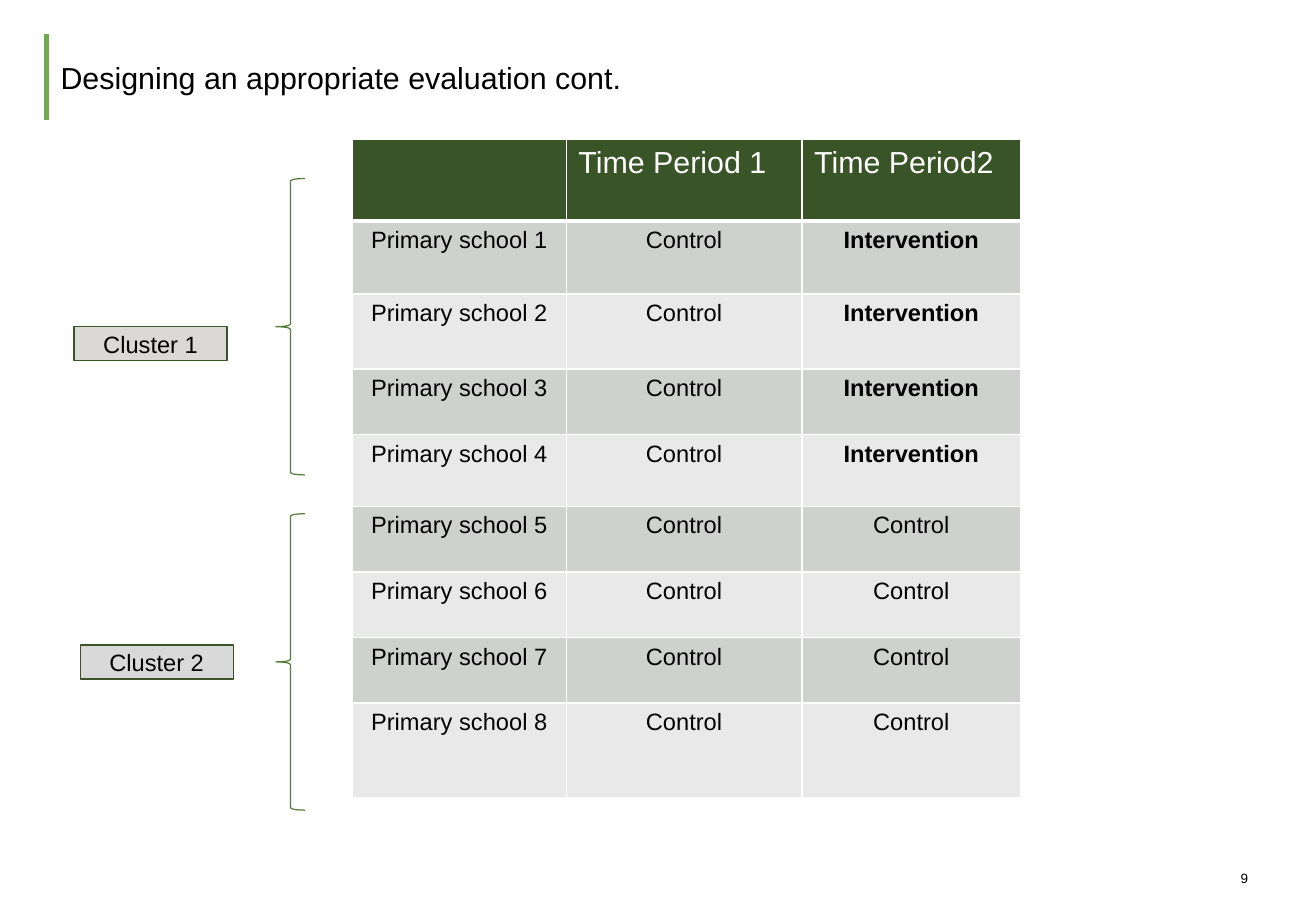
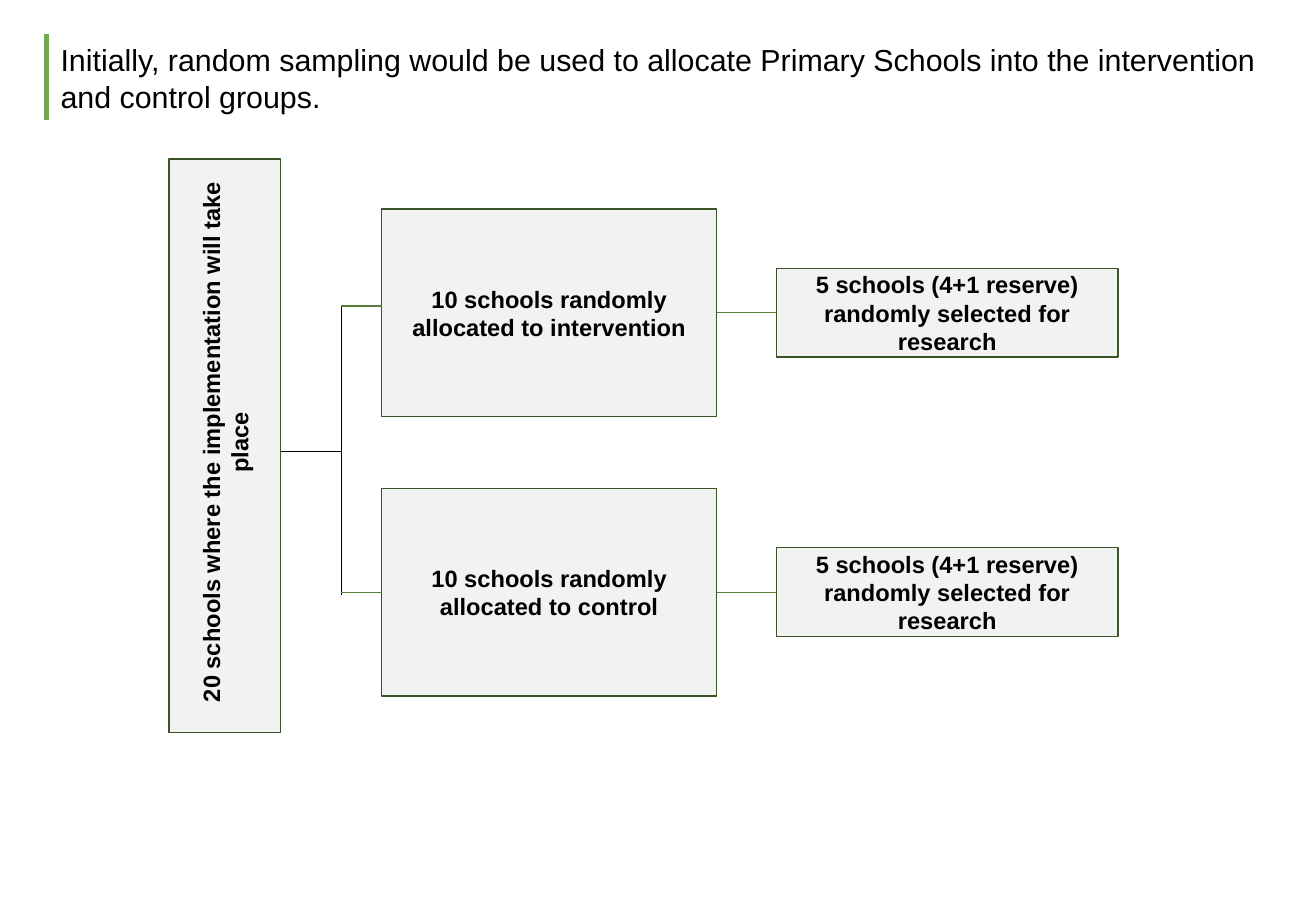
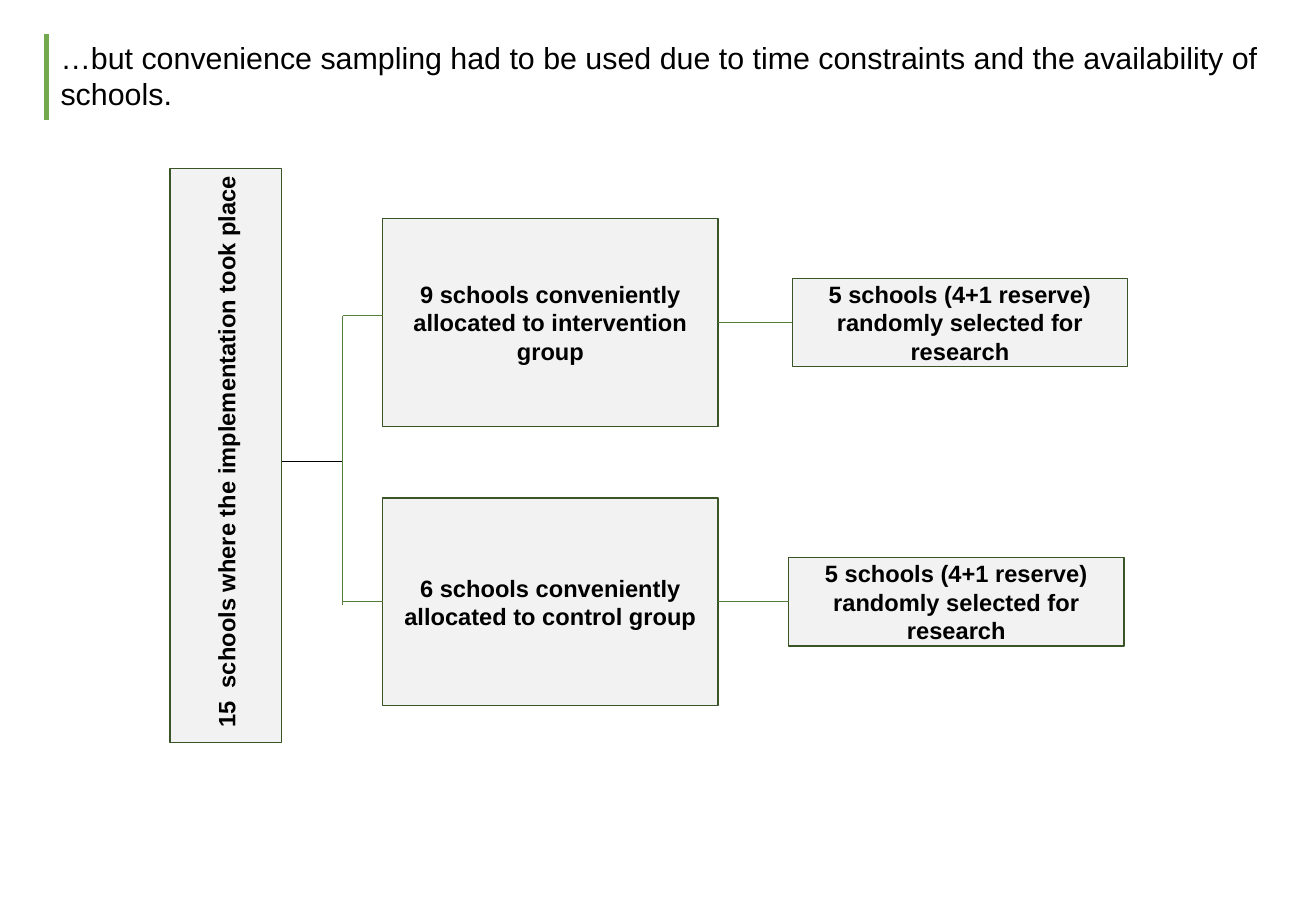
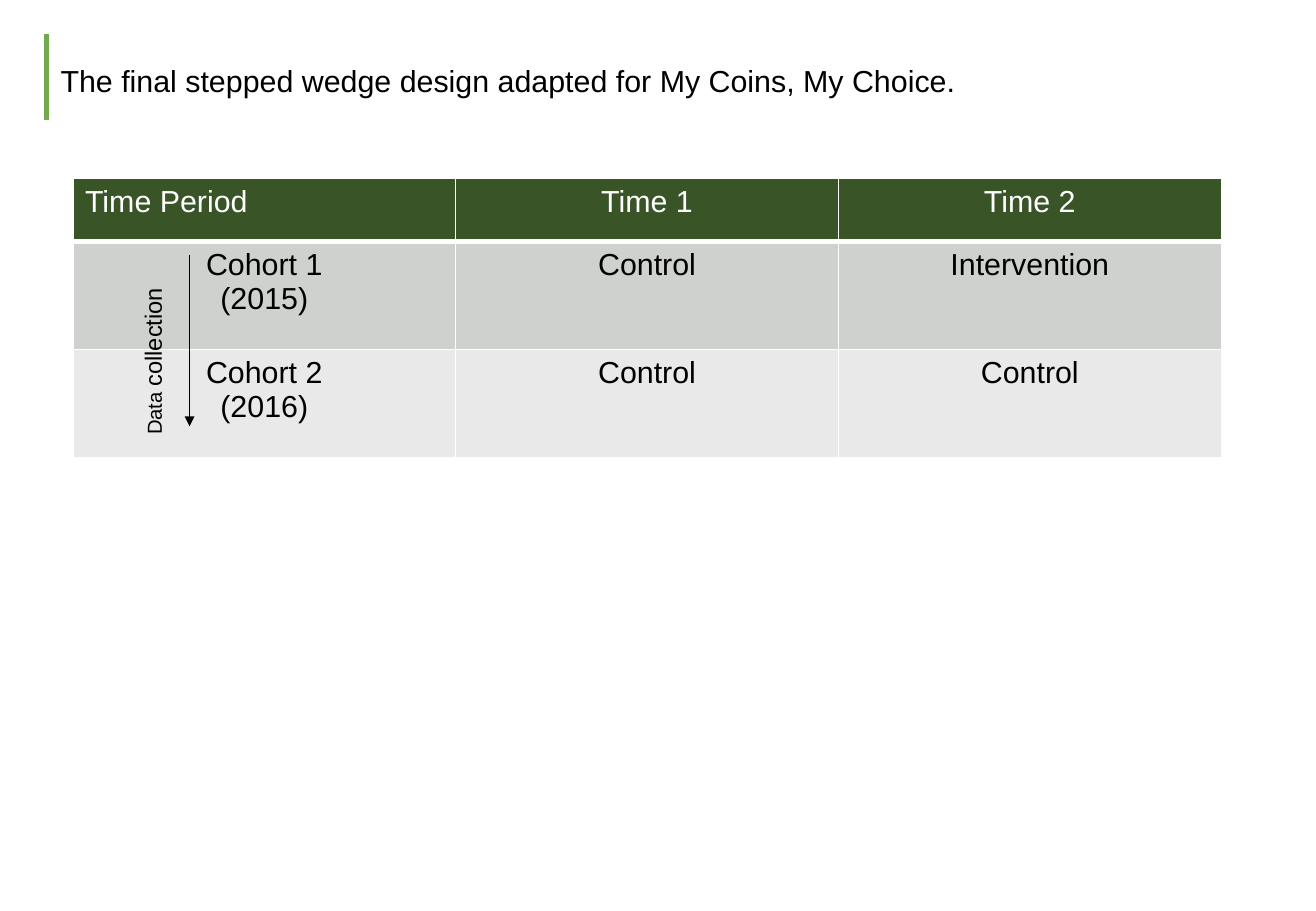
from pptx import Presentation
from pptx.dml.color import RGBColor
from pptx.enum.shapes import MSO_CONNECTOR, MSO_SHAPE
from pptx.enum.text import MSO_ANCHOR, PP_ALIGN
from pptx.oxml.ns import qn
from pptx.util import Inches, Pt
from lxml import etree

LINE = MSO_CONNECTOR.STRAIGHT
RECT, BRACE = MSO_SHAPE.RECTANGLE, MSO_SHAPE.LEFT_BRACE
MID, LOW = MSO_ANCHOR.MIDDLE, MSO_ANCHOR.BOTTOM
LEFT, CENTER = PP_ALIGN.LEFT, PP_ALIGN.CENTER

BLACK = RGBColor(0x00, 0x00, 0x00)
WHITE = RGBColor(0xFF, 0xFF, 0xFF)
ACCENT = RGBColor(0x72, 0xA8, 0x4E)
DARK = RGBColor(0x39, 0x54, 0x27)
GREEN = RGBColor(0x56, 0x7E, 0x3B)
PALE = RGBColor(0xF2, 0xF2, 0xF2)
WARM = RGBColor(0xDB, 0xD9, 0xD6)
GREY = RGBColor(0xD9, 0xD9, 0xD9)
BANDS = RGBColor(0xCE, 0xD1, 0xCD), RGBColor(0xE8, 0xE9, 0xE8)

# Text formats
BASE = {"name": "Arial", "size": Pt(14), "color": BLACK}
HEAD = {**BASE, "size": Pt(18)}
BOLD = {**BASE, "bold": True}
TINY = {**BASE, "size": Pt(8)}

# Content
PERIODS = [["", "Time Period 1", "Time Period2"]] + [
    [f"Primary school {n}", "Control", "Intervention" if n < 5 else "Control"]
    for n in range(1, 9)]
COHORTS = [
    ["Time Period", "Time 1", "Time 2"],
    ["Cohort 1\n(2015)", "Control", "Intervention"],
    ["Cohort 2\n(2016)", "Control", "Control"],
]
# Label, left, top, fill
CLUSTERS = [("Cluster 1", 0.61, 2.69, WARM), ("Cluster 2", 0.66, 5.31, GREY)]
PICKED = "5 schools (4+1 reserve) randomly selected for research"
FLOWS = [
    {"title": "Initially, random sampling would be used to allocate Primary "
              "Schools into the intervention and control groups.",
     "top": 0.29, "at": (1.39, 1.31), "trunk": BLACK,
     "stem": "20 schools where the implementation will take place",
     "arms": ["10 schools randomly allocated to intervention",
              "10 schools randomly allocated to control"],
     "ends": (6.39, 6.39), "wide": 2.81},
    {"title": "…but convenience sampling had to be used due to time "
              "constraints and the availability of schools.",
     "top": 0.27, "at": (1.4, 1.39), "trunk": GREEN,
     "stem": "15  schools where the implementation took place",
     "arms": ["9 schools conveniently allocated to intervention group",
              "6 schools conveniently allocated to control group"],
     "ends": (6.52, 6.49), "wide": 2.76},
]


def style(font, form):
    for key, val in form.items():
        if key == "color":
            font.color.rgb = val
        else:
            setattr(font, key, val)


def write(frame, text, form, align=CENTER):
    for i, line in enumerate(text.split("\n")):
        para = frame.paragraphs[0] if i == 0 else frame.add_paragraph()
        para.alignment = align
        if line:
            run = para.add_run()
            run.text = line
            style(run.font, form)


def label(slide, area, text, form, align=LEFT, anchor=MID):
    box = slide.shapes.add_textbox(*map(Inches, area))
    box.text_frame.word_wrap = True
    box.text_frame.vertical_anchor = anchor
    write(box.text_frame, text, form, align)
    return box


def shape(slide, kind, area, fill=None, line=DARK, text="", form=BASE):
    item = slide.shapes.add_shape(kind, *map(Inches, area))
    item.shadow.inherit = False
    item.line.color.rgb, item.line.width = line, Pt(0.75)
    if fill is None:
        item.fill.background()
    else:
        item.fill.solid()
        item.fill.fore_color.rgb = fill
    if text:
        item.text_frame.word_wrap = True
        item.text_frame.vertical_anchor = MID
        write(item.text_frame, text, form)
    return item


def link(slide, ends, color=GREEN, width=0.75, start=None, stop=None):
    item = slide.shapes.add_connector(LINE, *map(Inches, ends))
    item.line.color.rgb, item.line.width = color, Pt(width)
    etree.SubElement(item._element.spPr, qn("a:effectLst"))
    if start:
        item.begin_connect(*start)
    if stop:
        item.end_connect(*stop)
    return item


def edge(cell, sides):
    props = cell._tc.get_or_add_tcPr()
    for side, width in sides.items():
        ln = etree.SubElement(props, qn(f"a:ln{side}"), w=str(Pt(width)))
        fill = etree.SubElement(ln, qn("a:solidFill"))
        etree.SubElement(fill, qn("a:srgbClr"), val=str(WHITE))


def table(slide, at, cols, rows, data, size, left, strong=()):
    """Header cells in the columns named by left are left aligned."""
    area = *at, sum(cols), sum(rows)
    grid = slide.shapes.add_table(
        len(rows), len(cols), *map(Inches, area)).table
    for parts, name, sizes in ((grid.columns, "width", cols),
                               (grid.rows, "height", rows)):
        for part, val in zip(parts, sizes):
            setattr(part, name, Inches(val))
    for r, row in enumerate(data):
        for c, text in enumerate(row):
            cell, top = grid.cell(r, c), r == 0
            edge(cell, {"L": 1, "R": 1, "T": 1, "B": 3 if top else 1})
            cell.fill.solid()
            cell.fill.fore_color.rgb = DARK if top else BANDS[(r - 1) % 2]
            form = {**HEAD, "color": WHITE} if top else {
                **BASE, "size": Pt(size), "bold": text in strong}
            write(cell.text_frame, text, form,
                  LEFT if top and c in left else CENTER)


def page(deck, title, top=0.29):
    slide = deck.slides.add_slide(deck.slide_layouts[6])
    link(slide, (0.38, 0.28, 0.38, 0.99), ACCENT, 3)
    label(slide, (0.4, top, 10.05, 0.7), title, HEAD)
    return slide


def clusters(deck):
    slide = page(deck, "Designing an appropriate evaluation cont.")
    num = label(slide, (10.21, 7.17, 0.58, 0.13), "9", TINY, anchor=LOW)
    for side in ("left", "right", "top", "bottom"):
        setattr(num.text_frame, f"margin_{side}", 0)
    table(slide, (2.9, 1.15), (1.76, 1.94, 1.8),
          (0.67, 0.6, 0.62, 0.54, 0.59, 0.54, 0.54, 0.54, 0.78),
          PERIODS, 14, (0, 1, 2), ("Intervention",))
    for i, (text, x, y, fill) in enumerate(CLUSTERS):
        shape(slide, BRACE, (2.27, 1.47 + i * 2.76, 0.24, 2.44), line=GREEN)
        shape(slide, RECT, (x, y, 1.26, 0.28), fill, text=text)


def flow(deck, info):
    slide = page(deck, info["title"], info["top"])
    x, y = info["at"]
    stem = shape(slide, RECT, (x, y, 0.92, 4.72), PALE,
                 text=info["stem"], form=BOLD)
    frame = stem.text_frame
    frame.margin_top, frame.margin_bottom = 0, Inches(0.06)
    frame._txBody.bodyPr.set("vert", "vert270")

    # Trunk between the stem and the two arms
    fork, arm, high = x + 1.42, x + 1.75, y + 1.21
    link(slide, (x + 0.92, y + 2.41, fork, y + 2.41), BLACK)
    link(slide, (fork, high, fork, high + 2.38), info["trunk"])

    # Each arm leads to its research sample
    for i, (text, end) in enumerate(zip(info["arms"], info["ends"])):
        top = y + 0.41 + i * 2.3
        mid = top + 0.855
        group = shape(slide, RECT, (arm, top, 2.76, 1.71), PALE,
                      text=text, form=BOLD)
        pick = shape(slide, RECT, (end, mid - 0.365, info["wide"], 0.73),
                     PALE, text=PICKED, form=BOLD)
        turn = mid if i else high
        link(slide, (fork, turn, arm, turn), stop=(group, 1) if i else None)
        link(slide, (arm + 2.76, mid, end, mid),
             start=(group, 3), stop=(pick, 1))


def cohorts(deck):
    slide = page(deck, "The final stepped wedge design adapted for "
                       "My Coins, My Choice.", 0.31)
    table(slide, (0.6, 1.47), (3.15,) * 3, (0.52, 0.89, 0.89),
          COHORTS, 18, (0,))
    side = label(slide, (0.35, 2.79, 1.81, 0.37), "Data ",
                 {**BASE, "size": Pt(12)}, CENTER)
    side.rotation = 270
    run = side.text_frame.paragraphs[0].add_run()
    run.text = "collection"
    style(run.font, BASE)
    arrow = link(slide, (1.56, 2.1, 1.56, 3.51), BLACK)
    etree.SubElement(arrow.line._get_or_add_ln(), qn("a:tailEnd"),
                     type="triangle")


def main():
    deck = Presentation()
    deck.slide_width, deck.slide_height = Inches(10.83), Inches(7.5)
    clusters(deck)
    for info in FLOWS:
        flow(deck, info)
    cohorts(deck)
    deck.save("out.pptx")


if __name__ == "__main__":
    main()
